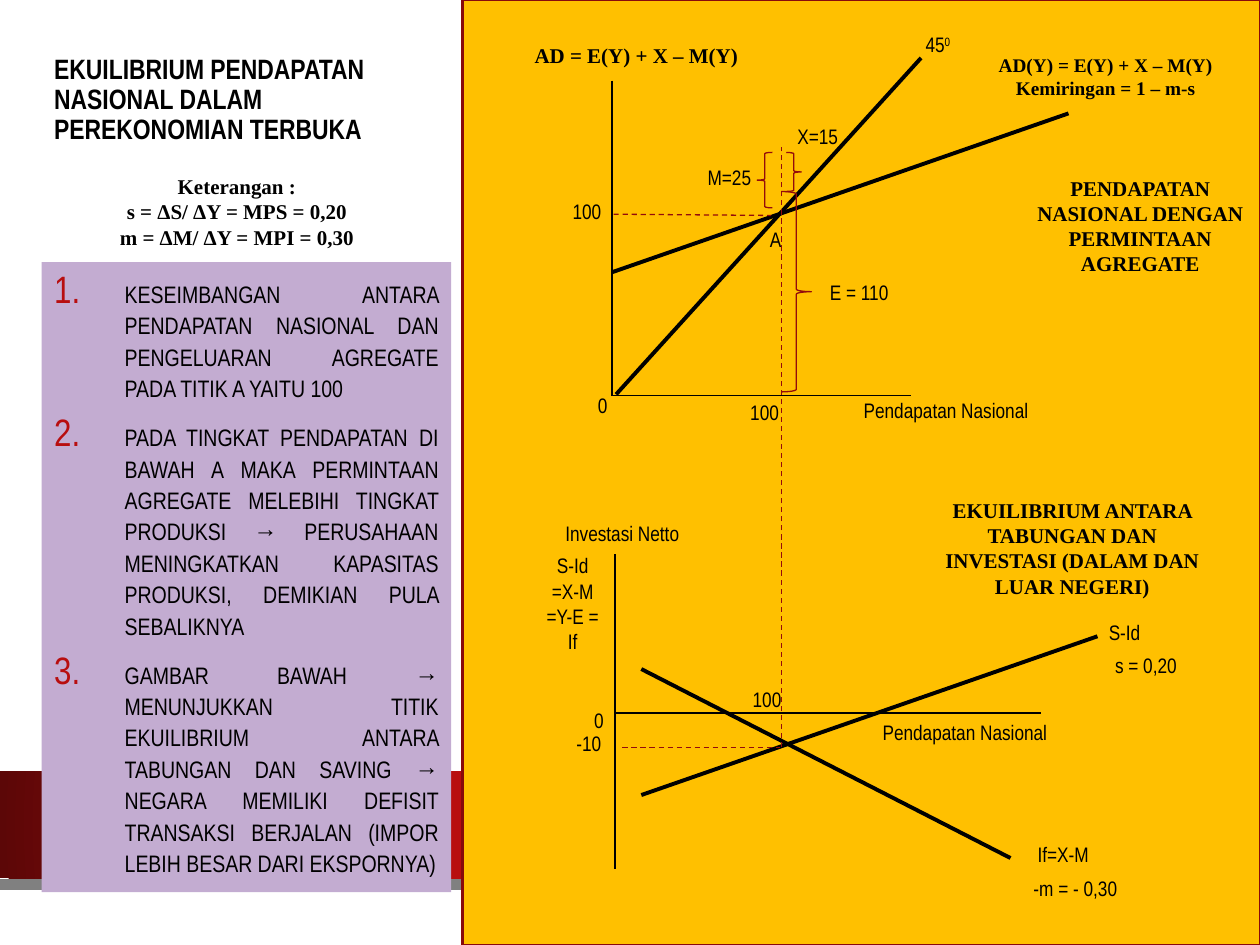
from lxml import etree
from pptx import Presentation
from pptx.dml.color import RGBColor
from pptx.enum.dml import MSO_LINE
from pptx.enum.shapes import MSO_CONNECTOR, MSO_SHAPE
from pptx.enum.text import MSO_ANCHOR, MSO_AUTO_SIZE, PP_ALIGN
from pptx.oxml.ns import qn
from pptx.util import Inches, Pt

BLACK = RGBColor(0x00, 0x00, 0x00)
GREY = RGBColor(0x80, 0x80, 0x80)
RED = RGBColor(0xB8, 0x0E, 0x0F)
MAROON = RGBColor(0x5C, 0x07, 0x07)
BRACE_RED = RGBColor(0x93, 0x0B, 0x0C)
BORDER_RED = RGBColor(0x88, 0x0A, 0x0B)
GOLD = RGBColor(0xFF, 0xC0, 0x00)
LILAC = RGBColor(0xC3, 0xAC, 0xD1)

NARROW = "Arial Narrow"
SERIF = "Times New Roman"
LEFT, CENTER, RIGHT, JUSTIFY = PP_ALIGN.LEFT, PP_ALIGN.CENTER, PP_ALIGN.RIGHT, PP_ALIGN.JUSTIFY
TOP, MIDDLE = MSO_ANCHOR.TOP, MSO_ANCHOR.MIDDLE
NO_FIT = MSO_AUTO_SIZE.NONE
RECTANGLE, LEFT_BRACE, RIGHT_BRACE = MSO_SHAPE.RECTANGLE, MSO_SHAPE.LEFT_BRACE, MSO_SHAPE.RIGHT_BRACE
STRAIGHT = MSO_CONNECTOR.STRAIGHT
DASH = MSO_LINE.DASH

TITLE = "EKUILIBRIUM PENDAPATAN NASIONAL DALAM PEREKONOMIAN TERBUKA"
POINTS = [
    "KESEIMBANGAN ANTARA PENDAPATAN NASIONAL DAN PENGELUARAN AGREGATE PADA TITIK A YAITU 100",
    "PADA TINGKAT PENDAPATAN DI BAWAH A MAKA PERMINTAAN AGREGATE MELEBIHI TINGKAT PRODUKSI → "
    "PERUSAHAAN MENINGKATKAN KAPASITAS PRODUKSI, DEMIKIAN PULA SEBALIKNYA",
    "GAMBAR BAWAH → MENUNJUKKAN TITIK EKUILIBRIUM ANTARA TABUNGAN DAN SAVING → NEGARA MEMILIKI "
    "DEFISIT TRANSAKSI BERJALAN (IMPOR LEBIH BESAR DARI EKSPORNYA)",
]
KEY = ["Keterangan :", "s = ΔS/ ΔY = MPS = 0,20", "m = ΔM/ ΔY = MPI = 0,30"]

HEADINGS = [
    ("AD = E(Y) + X – M(Y)", 4.14, 0.29, 1.82, 0.35, 12),
    ("AD(Y) = E(Y) + X – M(Y)\vKemiringan = 1 – m-s", 7.55, 0.37, 2.45, 0.53, 11),
    ("PENDAPATAN NASIONAL DENGAN PERMINTAAN AGREGATE", 8.1, 1.34, 1.9, 0.91, 12),
    ("EKUILIBRIUM ANTARA TABUNGAN DAN INVESTASI (DALAM DAN LUAR NEGERI)", 7.34, 3.9, 2.34, 0.91, 12),
]
RIGHT_LABELS = [
    ("0", 4.43, 3.07, 0.49),
    ("100", 4.38, 1.53, 0.49),
    ("100", 5.79, 3.12, 0.49),
    ("E = 110", 6.35, 2.17, 0.8),
    ("X=15", 6.1, 0.93, 0.65),
    ("M=25", 5.41, 1.26, 0.65),
    ("A", 5.81, 1.75, 0.49),
    ("Pendapatan Nasional", 6.68, 3.11, 1.58),
    ("0", 4.4, 5.57, 0.49),
    ("-10", 4.38, 5.75, 0.49),
    ("100", 5.81, 5.4, 0.49),
    ("Pendapatan Nasional", 6.83, 5.66, 1.58),
    ("If=X-M", 7.94, 6.63, 0.8),
    ("Investasi Netto", 3.91, 4.08, 1.58),
]
CENTER_LABELS = [
    ("S-Id\v=X-M\v=Y-E =\vIf", 4.22, 4.34, 0.65),
    ("S-Id", 8.65, 4.87, 0.55),
    ("-m = - 0,30", 8.02, 6.9, 1.03),
    ("s = 0,20", 8.58, 5.13, 1.03),
]
AXES = [
    (4.86, 0.64, 4.86, 3.14), (4.86, 3.14, 7.23, 3.14),
    (4.88, 4.4, 4.88, 6.9), (4.88, 5.66, 8.26, 5.66),
]
CURVES = [
    (4.89, 3.13, 7.31, 0.46), (4.86, 2.16, 8.48, 0.9),
    (5.09, 6.31, 8.71, 5.05), (5.09, 5.31, 8.02, 6.81),
]
GUIDES = [
    (4.87, 1.7, 6.12, 1.71), (6.2, 5.93, 6.2, 1.17), (4.94, 5.93, 6.19, 5.93),
]
BRACES = [
    (RIGHT_BRACE, 6.2, 1.52, 0.24, 1.59),
    (RIGHT_BRACE, 6.24, 1.21, 0.12, 0.31),
    (LEFT_BRACE, 6.01, 1.21, 0.12, 0.44),
]


def place(shape, left, top, width, height):
    shape.left, shape.top = Inches(left), Inches(top)
    shape.width, shape.height = Inches(width), Inches(height)


def add_number(paragraph):
    properties = paragraph._p.get_or_add_pPr()
    properties.set("marL", str(Inches(0.56)))
    properties.set("indent", str(Inches(-0.56)))
    color = etree.SubElement(properties, qn("a:buClr"))
    etree.SubElement(color, qn("a:srgbClr"), val=str(RED))
    etree.SubElement(properties, qn("a:buSzPct"), val="160000")
    etree.SubElement(properties, qn("a:buFont"), typeface="+mj-lt")
    etree.SubElement(properties, qn("a:buAutoNum"), type="arabicPeriod")


def write(frame, lines, size=12, font=NARROW, bold=False, align=CENTER, anchor=TOP,
          spacing=None, gap=0, numbered=False):
    frame.text = "\n".join(lines)
    frame.word_wrap = True
    frame.auto_size = NO_FIT
    frame.vertical_anchor = anchor
    for index, paragraph in enumerate(frame.paragraphs):
        if numbered:
            add_number(paragraph)
        paragraph.alignment = align
        paragraph.line_spacing = spacing
        paragraph.space_before = Pt(gap if index else 0)
        for run in paragraph.runs:
            run.font.name = font
            run.font.size = Pt(size)
            run.font.bold = bold
            run.font.color.rgb = BLACK


def add_label(slide, lines, left, top, width, height=0.34, **text_format):
    label = slide.shapes.add_textbox(Inches(left), Inches(top), Inches(width), Inches(height))
    write(label.text_frame, lines, **text_format)
    return label


def add_line(slide, ends, color=BLACK, weight=1, dash=None):
    line = slide.shapes.add_connector(STRAIGHT, *map(Inches, ends))
    line.line.color.rgb = color
    line.line.width = Pt(weight)
    line.line.dash_style = dash
    etree.SubElement(line._element.spPr, qn("a:effectLst"))


def add_panel(slide, kind, left, top, width, height, fill=None, border=None, weight=0.75):
    panel = slide.shapes.add_shape(kind, Inches(left), Inches(top), Inches(width), Inches(height))
    panel.shadow.inherit = False
    if fill is None:
        panel.fill.background()
    else:
        panel.fill.solid()
        panel.fill.fore_color.rgb = fill
    if border is None:
        panel.line.fill.background()
    else:
        panel.line.color.rgb = border
        panel.line.width = Pt(weight)
    return panel


def add_band(slide):
    band = add_panel(slide, RECTANGLE, 0, 6.12, 9.6, 0.85)
    band.fill.gradient()
    for stop, color, position in zip(band.fill.gradient_stops, (RED, MAROON), (0.34, 1)):
        stop.color.rgb = color
        stop.position = position
    gradient = band._element.spPr.find(qn("a:gradFill"))
    linear = gradient.find(qn("a:lin"))
    radial = etree.Element(qn("a:path"), path="circle")
    etree.SubElement(radial, qn("a:fillToRect"), l="50000", t="50000", r="50000", b="50000")
    gradient.replace(linear, radial)
    add_line(slide, (0, 7.02, 9.64, 7.02), GREY, 6.5)


def fill_placeholders(slide):
    title, points = slide.shapes.title, slide.placeholders[1]
    place(title, 0.33, 0.17, 3.22, 1.25)
    write(title.text_frame, [TITLE], size=16, bold=True, align=LEFT, anchor=MIDDLE, spacing=0.9)
    place(points, 0.33, 2.08, 3.25, 5)
    points.fill.solid()
    points.fill.fore_color.rgb = LILAC
    write(points.text_frame, POINTS, size=13.6, align=JUSTIFY, anchor=MIDDLE,
          spacing=1.1, gap=10, numbered=True)
    for placeholder in (title, points):
        slide.shapes._spTree.append(placeholder._element)


def add_diagrams(slide):
    for ends in AXES:
        add_line(slide, ends)
    for ends in CURVES:
        add_line(slide, ends, weight=2.25)
    for ends in GUIDES:
        add_line(slide, ends, BRACE_RED, 0.75, DASH)
    for brace in BRACES:
        add_panel(slide, *brace, border=BRACE_RED)
    for text, left, top, width, height, size in HEADINGS:
        add_label(slide, [text], left, top, width, height, size=size, font=SERIF, bold=True)
    for align, labels in ((RIGHT, RIGHT_LABELS), (CENTER, CENTER_LABELS)):
        for text, left, top, width in labels:
            height = 0.34 + 0.2 * text.count("\v")
            add_label(slide, [text], left, top, width, height, align=align)
    angle = add_label(slide, ["45"], 7.15, 0.2, 0.49, align=RIGHT)
    degree = angle.text_frame.paragraphs[0].add_run()
    degree.text = "0"
    degree.font.name = NARROW
    degree.font.size = Pt(12)
    degree.font.color.rgb = BLACK
    degree._r.get_or_add_rPr().set("baseline", "30000")


def main():
    deck = Presentation()
    deck.slide_width, deck.slide_height = Inches(10), Inches(7.5)
    slide = deck.slides.add_slide(deck.slide_layouts[1])
    add_band(slide)
    add_panel(slide, RECTANGLE, 3.67, 0, 6.33, 7.5, GOLD, BORDER_RED, 1.5)
    fill_placeholders(slide)
    add_label(slide, KEY, 0.67, 1.33, 2.42, 0.71, font=SERIF, bold=True)
    add_diagrams(slide)
    deck.save("out.pptx")


if __name__ == "__main__":
    main()
